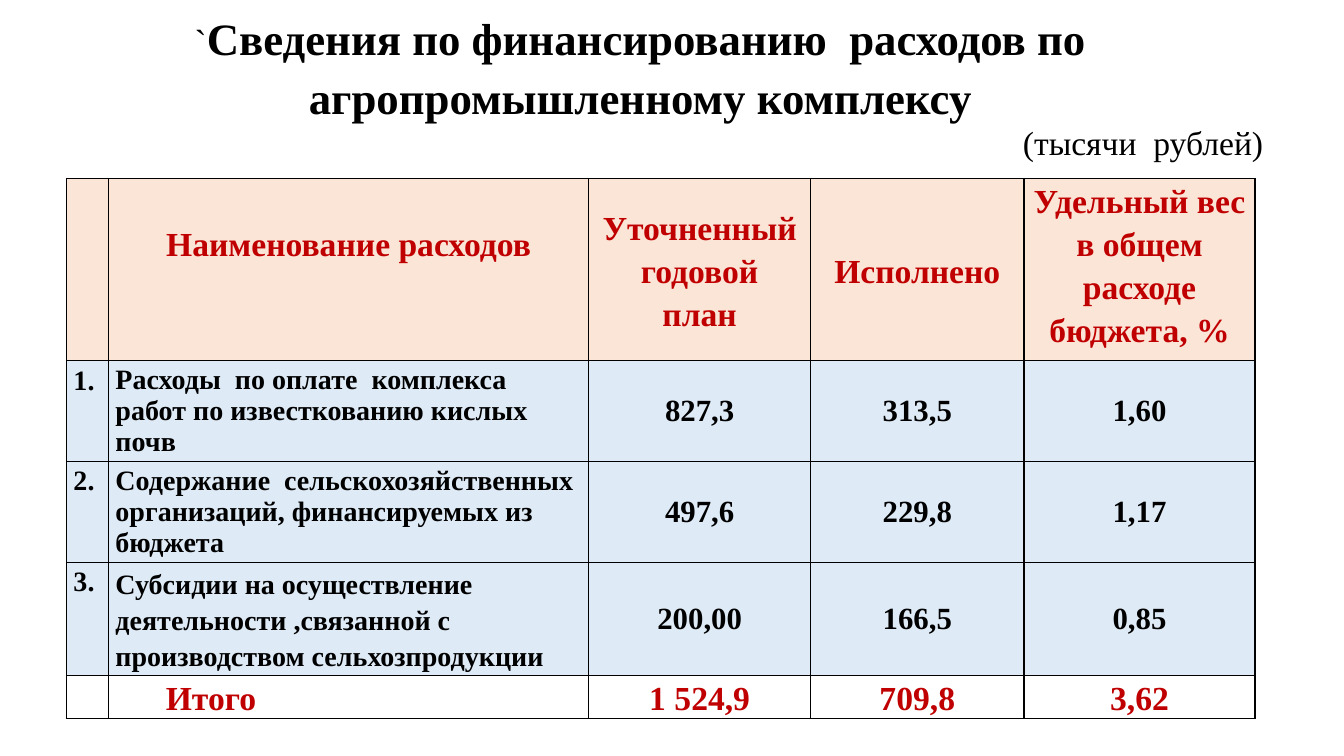
from lxml import etree
from pptx import Presentation
from pptx.dml.color import RGBColor
from pptx.enum.text import MSO_ANCHOR, PP_ALIGN
from pptx.oxml.ns import qn
from pptx.util import Pt

LEFT, CENTER = PP_ALIGN.LEFT, PP_ALIGN.CENTER
TOP, MIDDLE = MSO_ANCHOR.TOP, MSO_ANCHOR.MIDDLE

BLACK = RGBColor(0x00, 0x00, 0x00)
RED = RGBColor(0xC0, 0x00, 0x00)
PEACH = RGBColor(0xFB, 0xE5, 0xD6)
BLUE = RGBColor(0xDE, 0xEB, 0xF7)
WHITE = RGBColor(0xFF, 0xFF, 0xFF)

# Table data
COLUMNS = [30, 343, 158.5, 152.5, 165]
ROWS = [130, 72, 72, 81, 31]
DATA = [
    ["", "Наименование расходов", "Уточненный годовой\nплан", "Исполнено",
     "Удельный вес в общем расходе бюджета, %"],
    ["1.", "Расходы  по оплате  комплекса работ по известкованию кислых почв",
     "827,3", "313,5", "1,60"],
    ["2.", "Содержание  сельскохозяйственных организаций, финансируемых из бюджета",
     "497,6", "229,8", "1,17"],
    ["3.", "Субсидии на осуществление деятельности ,связанной с производством "
     "сельхозпродукции", "200,00", "166,5", "0,85"],
    ["", "Итого", "1 524,9", "709,8", "3,62"],
]

# Cell formats
HEAD = dict(size=24, color=RED, align=CENTER, spacing=1.15, fill=PEACH)
NUMBER = dict(size=20, spacing=1.15, fill=BLUE)
NAME = dict(size=20, anchor=MIDDLE, fill=BLUE)
VALUE = dict(size=22, align=CENTER, anchor=MIDDLE, fill=BLUE)
TOTAL = dict(size=24, color=RED, spacing=1.15, fill=WHITE)
SUM = dict(TOTAL, align=CENTER)
HEAD_MIDDLE = dict(HEAD, anchor=MIDDLE)
FORMATS = [
    [HEAD, dict(HEAD, top=30.5), HEAD_MIDDLE, HEAD_MIDDLE, HEAD],
    [NUMBER, NAME] + [VALUE] * 3,
    [NUMBER, NAME] + [VALUE] * 3,
    [NUMBER, dict(NAME, spacing=1.15)] + [VALUE] * 3,
    [TOTAL, dict(TOTAL, indent=36)] + [SUM] * 3,
]


class Deck:
    font = "Times New Roman"

    def __init__(self, width, height):
        self.prs = Presentation()
        self.prs.slide_width, self.prs.slide_height = Pt(width), Pt(height)
        self.s = self.prs.slides.add_slide(self.prs.slide_layouts[6])

    def paragraph(self, p, runs, align=LEFT, spacing=1.0, indent=0, right=0):
        for name, value in dict(alignment=align, line_spacing=spacing).items():
            setattr(p, name, value)
        for name, value in dict(marL=indent, marR=right).items():
            if value:
                p._p.get_or_add_pPr().set(name, str(Pt(value)))
        for text, size, bold, color in runs:
            r = p.add_run()
            r.text = text
            for name, value in dict(name=self.font, size=Pt(size), bold=bold).items():
                setattr(r.font, name, value)
            r.font.color.rgb = color

    def text(self, left, top, width, height, paragraphs):
        sp = self.s.shapes.add_textbox(Pt(left), Pt(top), Pt(width), Pt(height))
        tf = sp.text_frame
        tf.word_wrap = True
        for i, (runs, style) in enumerate(paragraphs):
            p = tf.add_paragraph() if i else tf.paragraphs[0]
            self.paragraph(p, runs, **style)

    def border(self, cell, color=BLACK, width=1):
        tc_pr = cell._tc.get_or_add_tcPr()
        for i, side in enumerate(("a:lnL", "a:lnR", "a:lnT", "a:lnB")):
            ln = etree.Element(qn(side), w=str(Pt(width)))
            fill = etree.SubElement(ln, qn("a:solidFill"))
            etree.SubElement(fill, qn("a:srgbClr"), val=str(color))
            tc_pr.insert(i, ln)

    def cell(self, cell, text, size, fill, color=BLACK, anchor=TOP, top=0, **style):
        values = dict(margin_left=Pt(5), margin_right=Pt(5), margin_top=Pt(top),
                      margin_bottom=0, vertical_anchor=anchor)
        for name, value in values.items():
            setattr(cell, name, value)
        cell.fill.solid()
        cell.fill.fore_color.rgb = fill
        self.border(cell)
        tf = cell.text_frame
        for i, line in enumerate(text.split("\n") if text else []):
            p = tf.add_paragraph() if i else tf.paragraphs[0]
            self.paragraph(p, [(line, size, True, color)], **style)

    def table(self, left, top, columns, rows, data, formats):
        table = self.s.shapes.add_table(len(rows), len(columns), Pt(left), Pt(top),
                                        Pt(sum(columns)), Pt(sum(rows))).table
        for column, width in zip(table.columns, columns):
            column.width = Pt(width)
        for row, height, texts, styles in zip(table.rows, rows, data, formats):
            row.height = Pt(height)
            for cell, text, style in zip(row.cells, texts, styles):
                self.cell(cell, text, **style)


def main():
    deck = Deck(960, 540)

    # Expense table
    deck.table(47.5, 127.5, COLUMNS, ROWS, DATA, FORMATS)

    # Title
    title = dict(align=CENTER, spacing=1.1)
    deck.text(22.5, 0, 881, 240, [
        ([("`", 26, False, BLACK),
          ("Сведения по финансированию  расходов по", 32, True, BLACK)],
         dict(title, right=11)),
        ([("агропромышленному комплексу", 32, True, BLACK)], title),
    ])

    # Unit of measure
    deck.text(723, 83.5, 187, 36,
              [([("(тысячи  рублей)", 24, False, BLACK)], dict(align=CENTER))])

    deck.prs.save("out.pptx")


if __name__ == "__main__":
    main()
